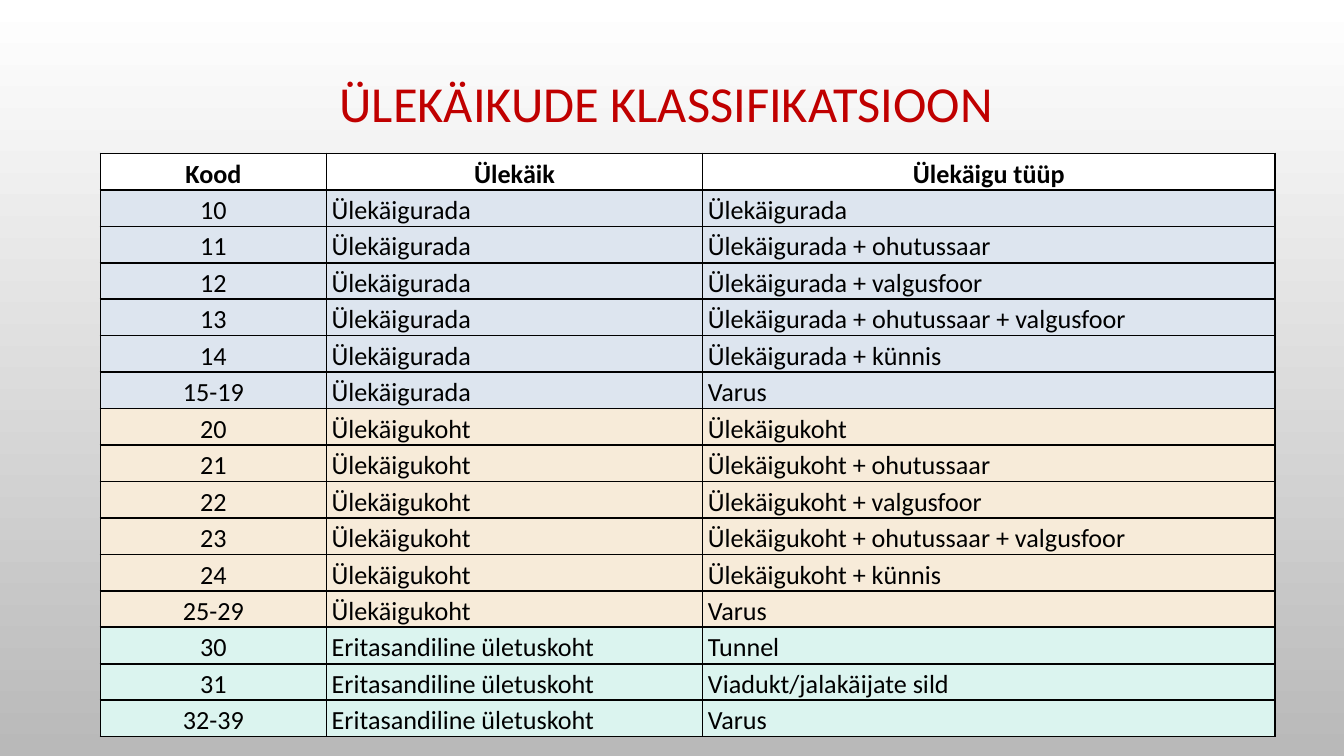
from lxml.etree import SubElement
from pptx import Presentation
from pptx.dml.color import RGBColor
from pptx.enum.text import MSO_ANCHOR, PP_ALIGN
from pptx.oxml import parse_xml
from pptx.oxml.ns import nsdecls, qn
from pptx.util import Cm, Pt

FONT = "Calibri"
BLACK = RGBColor(0, 0, 0)
WHITE = RGBColor(255, 255, 255)
GREY = RGBColor(0xB9, 0xB9, 0xB9)
RED = RGBColor(0xC0, 0, 0)
BLUE = RGBColor(0xDD, 0xE5, 0xEF)
SAND = RGBColor(0xF7, 0xEB, 0xD9)
MINT = RGBColor(0xDB, 0xF4, 0xEF)

HEADER = ("Kood", "Ülekäik", "Ülekäigu tüüp")
EXTRAS = ("", " + ohutussaar", " + valgusfoor", " + ohutussaar + valgusfoor", " + künnis")
COLUMNS = (4.27, 7.11, 10.82)
ROW_HEIGHT = 0.69


def crossing_rows(name, tens, color):
    rows = [(f"{tens}{i}", name, name + extra, color) for i, extra in enumerate(EXTRAS)]
    return rows + [(f"{tens}5-{tens}9", name, "Varus", color)]


def separated_rows(name, color):
    types = (("30", "Tunnel"), ("31", "Viadukt/jalakäijate sild"), ("32-39", "Varus"))
    return [(code, name, kind, color) for code, kind in types]


def style_paragraph(p, size, color, align, spacing, bold=False):
    p.alignment = align
    p.line_spacing = spacing
    for r in p.runs:
        r.font.name = FONT
        r.font.size = Pt(size)
        r.font.bold = bold
        r.font.color.rgb = color


def add_borders(cell):
    tc_pr = cell._tc.get_or_add_tcPr()
    for i, side in enumerate(("lnL", "lnR", "lnT", "lnB")):
        line = parse_xml(f'<a:{side} {nsdecls("a")} w="{Pt(1)}"/>')
        fill = SubElement(line, qn("a:solidFill"))
        SubElement(fill, qn("a:srgbClr"), val=str(BLACK))
        tc_pr.insert(i, line)


def fill_cell(cell, text, color, align, bold):
    cell.margin_left = cell.margin_right = Cm(0.1)
    cell.margin_top = cell.margin_bottom = 0
    cell.fill.solid()
    cell.fill.fore_color.rgb = color
    add_borders(cell)
    cell.text_frame.text = text
    p = cell.text_frame.paragraphs[0]
    p.space_after = Pt(10)
    style_paragraph(p, 14, BLACK, align, 1.15, bold)


def add_background(s):
    fill = s.background.fill
    fill.gradient()
    fill.gradient_angle = 270
    for stop, color in zip(fill.gradient_stops, (WHITE, GREY)):
        stop.color.rgb = color


def add_title(s, left, top, width, height):
    tf = s.shapes.add_textbox(Cm(left), Cm(top), Cm(width), Cm(height)).text_frame
    tf.word_wrap = True
    tf.vertical_anchor = MSO_ANCHOR.MIDDLE
    tf.text = "ÜLEKÄIKUDE KLASSIFIKATSIOON "
    style_paragraph(tf.paragraphs[0], 27, RED, PP_ALIGN.CENTER, 0.9)


def add_classification(s, left, top, width):
    rows = [(*HEADER, WHITE)]
    rows += crossing_rows("Ülekäigurada", 1, BLUE)
    rows += crossing_rows("Ülekäigukoht", 2, SAND)
    rows += separated_rows("Eritasandiline ületuskoht", MINT)
    height = ROW_HEIGHT * len(rows)
    table = s.shapes.add_table(
        len(rows), len(COLUMNS), Cm(left), Cm(top), Cm(width), Cm(height)
    ).table
    table.horz_banding = False
    for column, share in zip(table.columns, COLUMNS):
        column.width = Cm(width * share / sum(COLUMNS))
    for i, (*texts, color) in enumerate(rows):
        table.rows[i].height = Cm(ROW_HEIGHT)
        for j, text in enumerate(texts):
            align = PP_ALIGN.CENTER if i == 0 or j == 0 else PP_ALIGN.LEFT
            fill_cell(table.cell(i, j), text, color, align, i == 0)


def main():
    prs = Presentation()
    prs.slide_width, prs.slide_height = Cm(25.4), Cm(14.29)
    s = prs.slides.add_slide(prs.slide_layouts[6])
    add_background(s)
    add_title(s, 1.9, 1.3, 21.6, 1.42)
    add_classification(s, 1.9, 2.9, 22.2)
    prs.save("out.pptx")


if __name__ == "__main__":
    main()
